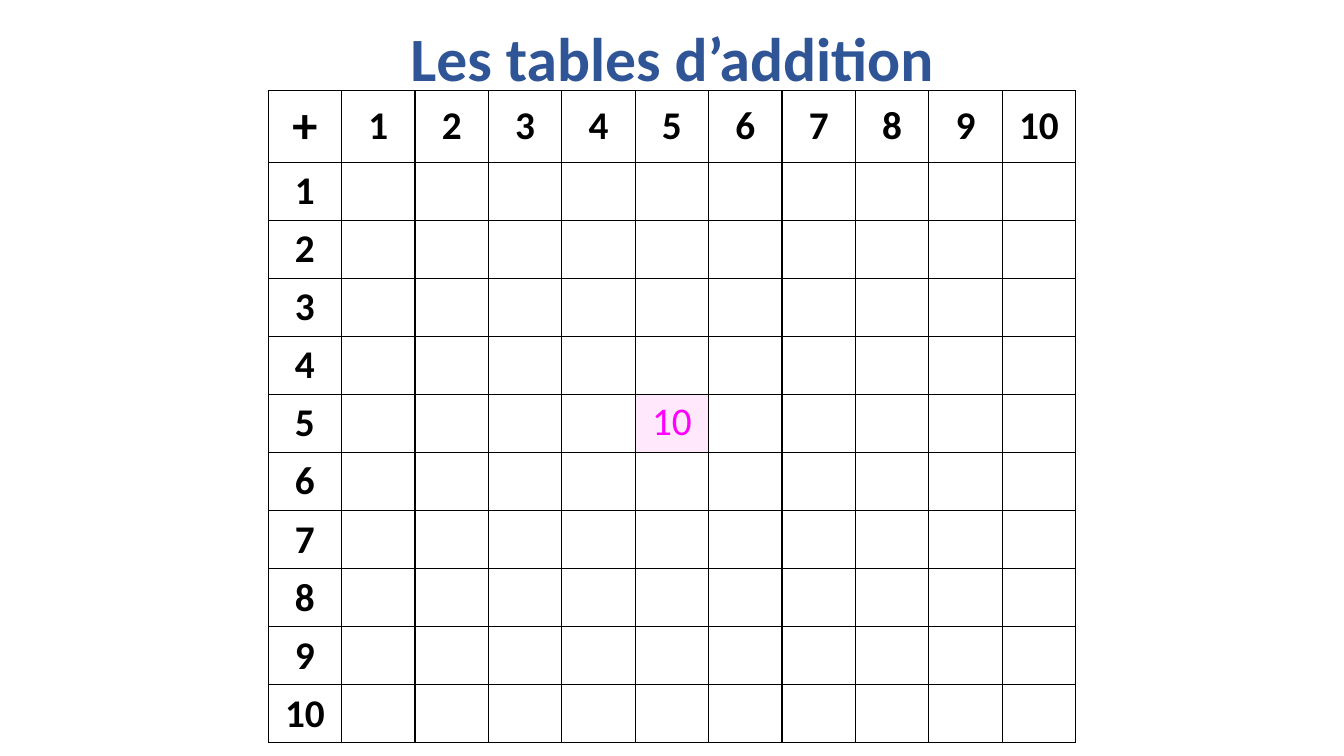
import dataclasses

import lxml.etree
import pptx
import pptx.dml.color
import pptx.enum.text
import pptx.oxml.ns
import pptx.util

Inches = pptx.util.Inches


@dataclasses.dataclass(frozen=True)
class Theme:
    font: str = "Calibri"
    title_color: str = "2F5597"
    text_color: str = "000000"
    border_color: str = "000000"
    header_fill: str = "FFFFFF"
    highlight_fill: str = "FFE7FC"
    answer_color: str = "FF00FF"
    title_size: int = 44
    sign_size: int = 36
    number_size: int = 28
    border_width: int = 1


class SlideBuilder:
    def __init__(self, slide, theme):
        self.slide = slide
        self.theme = theme

    def add_centered_run(self, text_frame, text, size, color, bold=False):
        paragraph = text_frame.paragraphs[0]
        paragraph.alignment = pptx.enum.text.PP_ALIGN.CENTER
        run = paragraph.add_run()
        run.text = text
        run.font.name = self.theme.font
        run.font.size = pptx.util.Pt(size)
        run.font.bold = bold
        run.font.color.rgb = pptx.dml.color.RGBColor.from_string(color)
        return paragraph

    def title(self, text, left, top, width, height):
        shape = self.slide.shapes.title
        shape.left, shape.top = Inches(left), Inches(top)
        shape.width, shape.height = Inches(width), Inches(height)
        shape.text_frame.vertical_anchor = pptx.enum.text.MSO_ANCHOR.MIDDLE
        paragraph = self.add_centered_run(
            shape.text_frame, text, self.theme.title_size, self.theme.title_color, True
        )
        paragraph.line_spacing = 0.9

    def text(self, text, left, top, width, height):
        shape = self.slide.shapes.add_textbox(
            Inches(left), Inches(top), Inches(width), Inches(height)
        )
        shape.text_frame.word_wrap = True
        shape.text_frame.auto_size = pptx.enum.text.MSO_AUTO_SIZE.SHAPE_TO_FIT_TEXT
        self.add_centered_run(
            shape.text_frame, text, self.theme.number_size, self.theme.answer_color
        )

    def border(self, cell):
        properties = cell._tc.get_or_add_tcPr()
        qualified = pptx.oxml.ns.qn
        for position, side in enumerate(("lnL", "lnR", "lnT", "lnB")):
            line = lxml.etree.Element(qualified(f"a:{side}"))
            line.set("w", str(pptx.util.Pt(self.theme.border_width)))
            fill = lxml.etree.SubElement(line, qualified("a:solidFill"))
            color = lxml.etree.SubElement(fill, qualified("a:srgbClr"))
            color.set("val", self.theme.border_color)
            properties.insert(position, line)

    def fill(self, cell, color):
        cell.fill.solid()
        cell.fill.fore_color.rgb = pptx.dml.color.RGBColor.from_string(color)

    def addition_table(self, count, left, top, width, header_height, row_height, highlight):
        theme = self.theme
        size = count + 1
        table = self.slide.shapes.add_table(
            size, size, Inches(left), Inches(top), Inches(width),
            Inches(header_height + count * row_height),
        ).table
        table.first_row = table.horz_banding = False
        for index in range(size):
            table.columns[index].width = Inches(width / size)
            table.rows[index].height = Inches(row_height if index else header_height)
        for row in range(size):
            for column in range(size):
                cell = table.cell(row, column)
                if row == 0 or column == 0:
                    number = row + column
                    cell.vertical_anchor = pptx.enum.text.MSO_ANCHOR.MIDDLE
                    self.add_centered_run(
                        cell.text_frame,
                        str(number) if number else "+",
                        theme.number_size if number else theme.sign_size,
                        theme.text_color,
                        True,
                    )
                    self.fill(cell, theme.header_fill)
                elif (row, column) == highlight:
                    self.fill(cell, theme.highlight_fill)
                else:
                    cell.fill.background()
                self.border(cell)


def main():
    presentation = pptx.Presentation()
    presentation.slide_width = Inches(13.33)
    presentation.slide_height = Inches(7.5)
    slide = presentation.slides.add_slide(presentation.slide_layouts[5])
    builder = SlideBuilder(slide, Theme())
    builder.title("Les tables d’addition", 0.92, -0.11, 11.5, 1.45)
    builder.addition_table(10, 2.66, 0.9, 8.01, 0.7, 0.57, highlight=(5, 5))
    builder.text("10", 6.31, 3.88, 0.71, 0.57)
    presentation.save("out.pptx")


if __name__ == "__main__":
    main()
